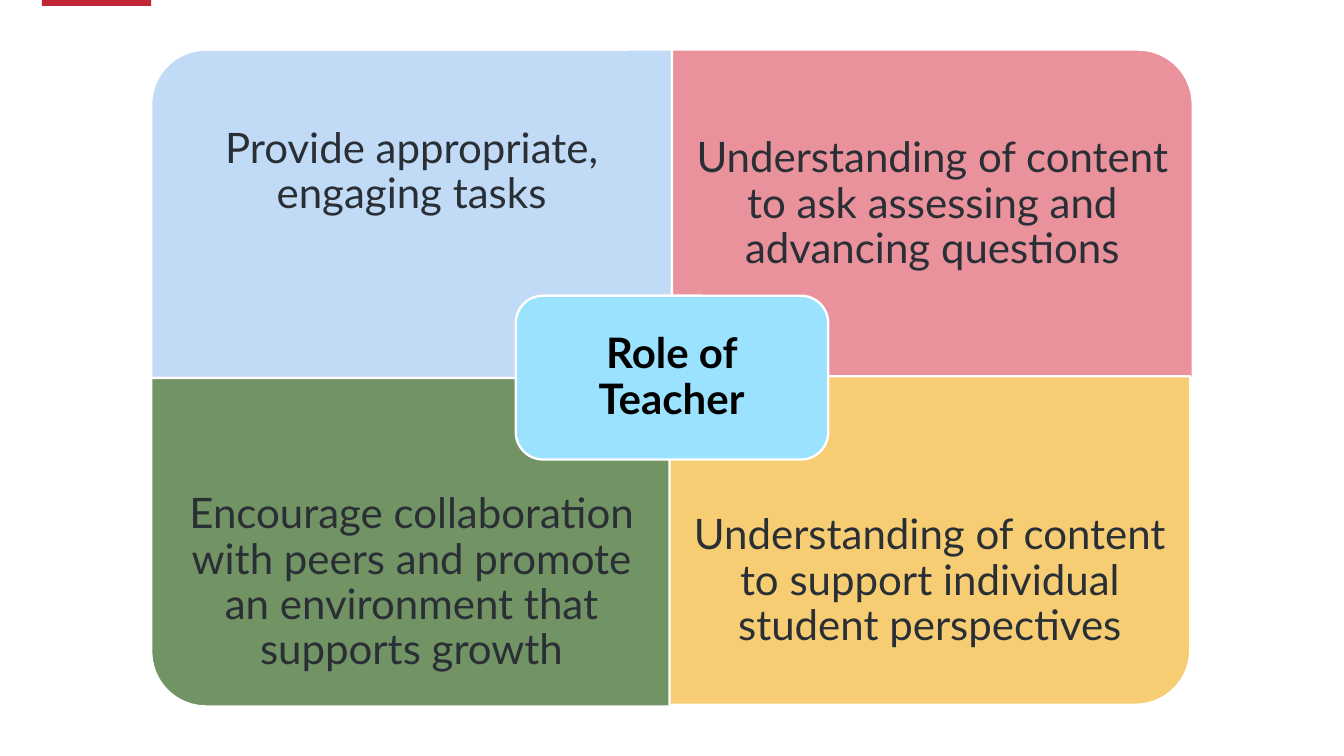
from dataclasses import dataclass

from pptx import Presentation
from pptx.dml.color import RGBColor
from pptx.enum.shapes import MSO_SHAPE
from pptx.enum.text import MSO_ANCHOR, PP_ALIGN
from pptx.shapes.autoshape import Shape
from pptx.slide import Slide
from pptx.util import Emu, Pt

RECTANGLE = MSO_SHAPE.RECTANGLE
ROUNDED = MSO_SHAPE.ROUNDED_RECTANGLE
ONE_ROUNDED_CORNER = MSO_SHAPE.ROUND_1_RECTANGLE
MIDDLE = MSO_ANCHOR.MIDDLE
CENTER = PP_ALIGN.CENTER

WHITE = RGBColor(0xFF, 0xFF, 0xFF)
BLACK = RGBColor(0x00, 0x00, 0x00)
SLATE = RGBColor(0x2A, 0x2F, 0x36)
RED = RGBColor(0xC1, 0x26, 0x37)
BLUE = RGBColor(0xC1, 0xDB, 0xF7)
PINK = RGBColor(0xEA, 0x92, 0x9C)
GREEN = RGBColor(0x72, 0x93, 0x64)
YELLOW = RGBColor(0xF6, 0xCD, 0x72)
CYAN = RGBColor(0x9B, 0xE2, 0xFF)

EMU_PER_PX = 9144
FONT = "Lato"
QUADRANT_WIDTH, QUADRANT_HEIGHT = 620, 391
LABEL_HEIGHT = 293


def px(length: float) -> Emu:
    return Emu(round(length * EMU_PER_PX))


@dataclass(frozen=True)
class Frame:
    left: int
    top: int
    width: int
    height: int


@dataclass(frozen=True)
class Quadrant:
    left: int
    top: int
    label_top: int
    rotation: int
    color: RGBColor
    label: str


QUADRANTS = [
    Quadrant(180, 59, 59, 270, BLUE, "Provide appropriate, engaging tasks"),
    Quadrant(800, 59, 97, 0, PINK,
             "Understanding of content to ask assessing and advancing questions"),
    Quadrant(180, 450, 548, 180, GREEN,
             "Encourage collaboration with peers and promote an environment "
             "that supports growth"),
    Quadrant(797, 448, 546, 90, YELLOW,
             "Understanding of content to support individual student perspectives"),
]
ACCENT = Frame(50, 0, 130, 7)
ROLE = Frame(614, 352, 372, 195)
ROLE_LABEL = Frame(623, 362, 353, 176)


def add_block(slide: Slide, preset: MSO_SHAPE, frame: Frame, color: RGBColor,
              rotation: int = 0, outlined: bool = True) -> None:
    width, height = frame.width, frame.height
    if rotation % 180:
        width, height = height, width
    left = frame.left + (frame.width - width) / 2
    top = frame.top + (frame.height - height) / 2
    block: Shape = slide.shapes.add_shape(
        preset, px(left), px(top), px(width), px(height))
    block.rotation = rotation
    block.shadow.inherit = False
    block.fill.solid()
    block.fill.fore_color.rgb = color
    if outlined:
        block.line.color.rgb = WHITE
        block.line.width = Pt(2)
    else:
        block.line.fill.background()


def add_label(slide: Slide, frame: Frame, text: str, inset: int,
              color: RGBColor = SLATE, bold: bool = False) -> None:
    label = slide.shapes.add_textbox(
        px(frame.left), px(frame.top), px(frame.width), px(frame.height)).text_frame
    label.word_wrap = True
    label.vertical_anchor = MIDDLE
    label.margin_left = label.margin_right = px(inset)
    label.margin_top = label.margin_bottom = px(inset)
    paragraph = label.paragraphs[0]
    paragraph.text = text
    paragraph.alignment = CENTER
    paragraph.line_spacing = 0.9
    paragraph.font.name = FONT
    paragraph.font.size = Pt(36)
    paragraph.font.bold = bold
    paragraph.font.color.rgb = color


def add_quadrant(slide: Slide, quadrant: Quadrant) -> None:
    area = Frame(quadrant.left, quadrant.top, QUADRANT_WIDTH, QUADRANT_HEIGHT)
    add_block(slide, ONE_ROUNDED_CORNER, area, quadrant.color, quadrant.rotation)
    label_area = Frame(quadrant.left, quadrant.label_top, QUADRANT_WIDTH, LABEL_HEIGHT)
    add_label(slide, label_area, quadrant.label, 28)


def main() -> None:
    presentation = Presentation()
    presentation.slide_width = px(1600)
    presentation.slide_height = px(900)
    slide = presentation.slides.add_slide(presentation.slide_layouts[6])
    add_block(slide, RECTANGLE, ACCENT, RED, outlined=False)
    for quadrant in QUADRANTS:
        add_quadrant(slide, quadrant)
    add_block(slide, ROUNDED, ROLE, CYAN)
    add_label(slide, ROLE_LABEL, "Role of Teacher", 15, BLACK, bold=True)
    presentation.save("out.pptx")


if __name__ == "__main__":
    main()
